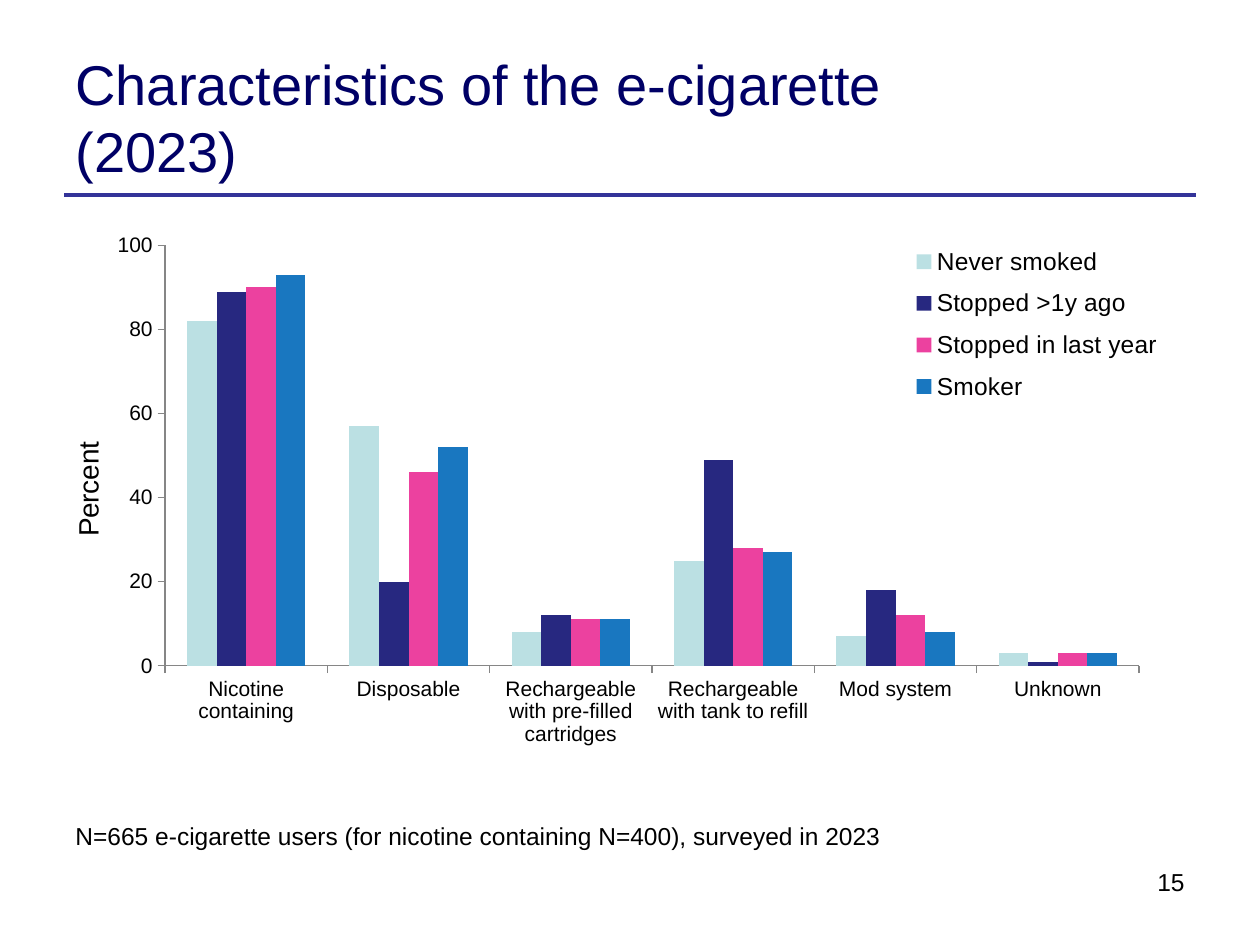
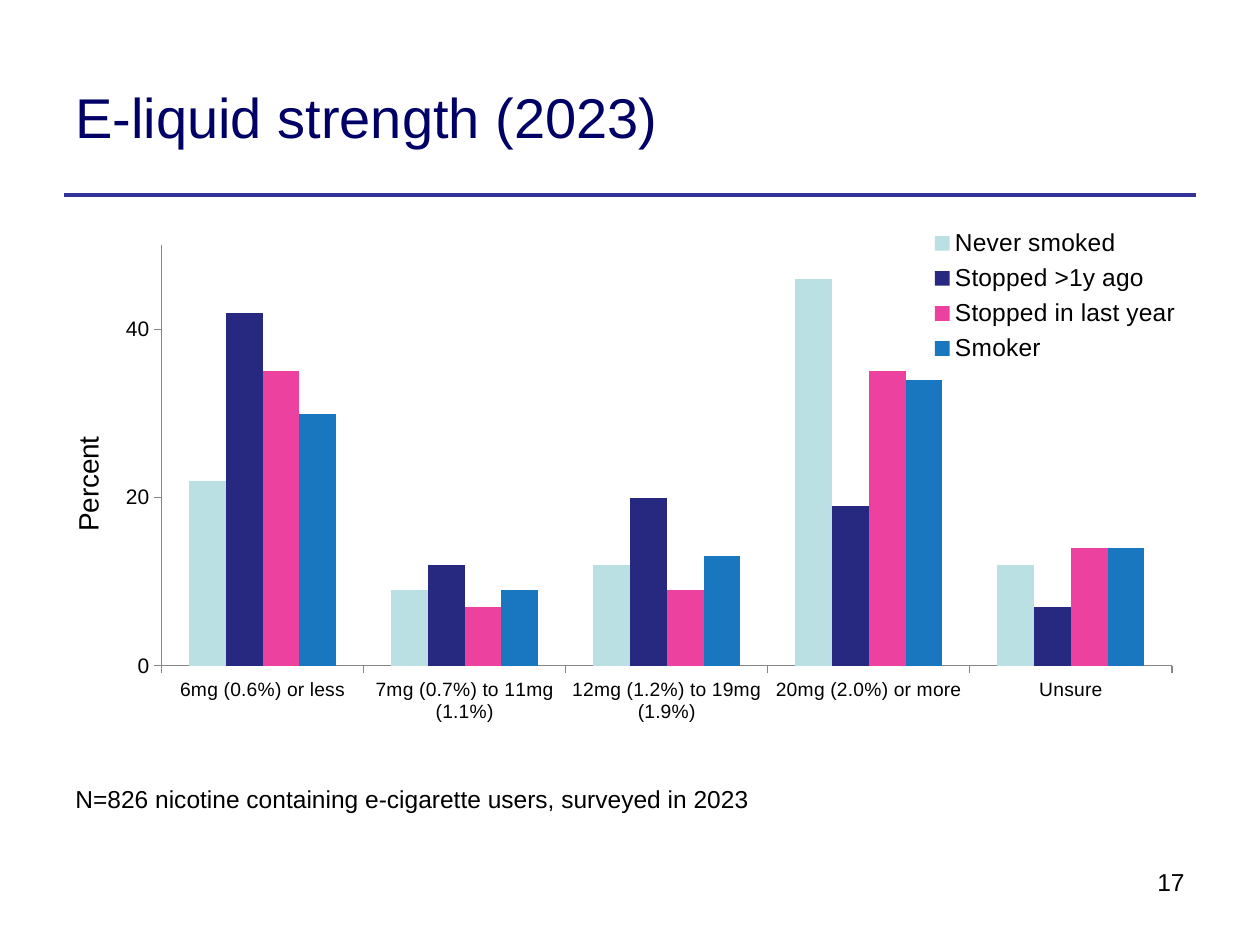
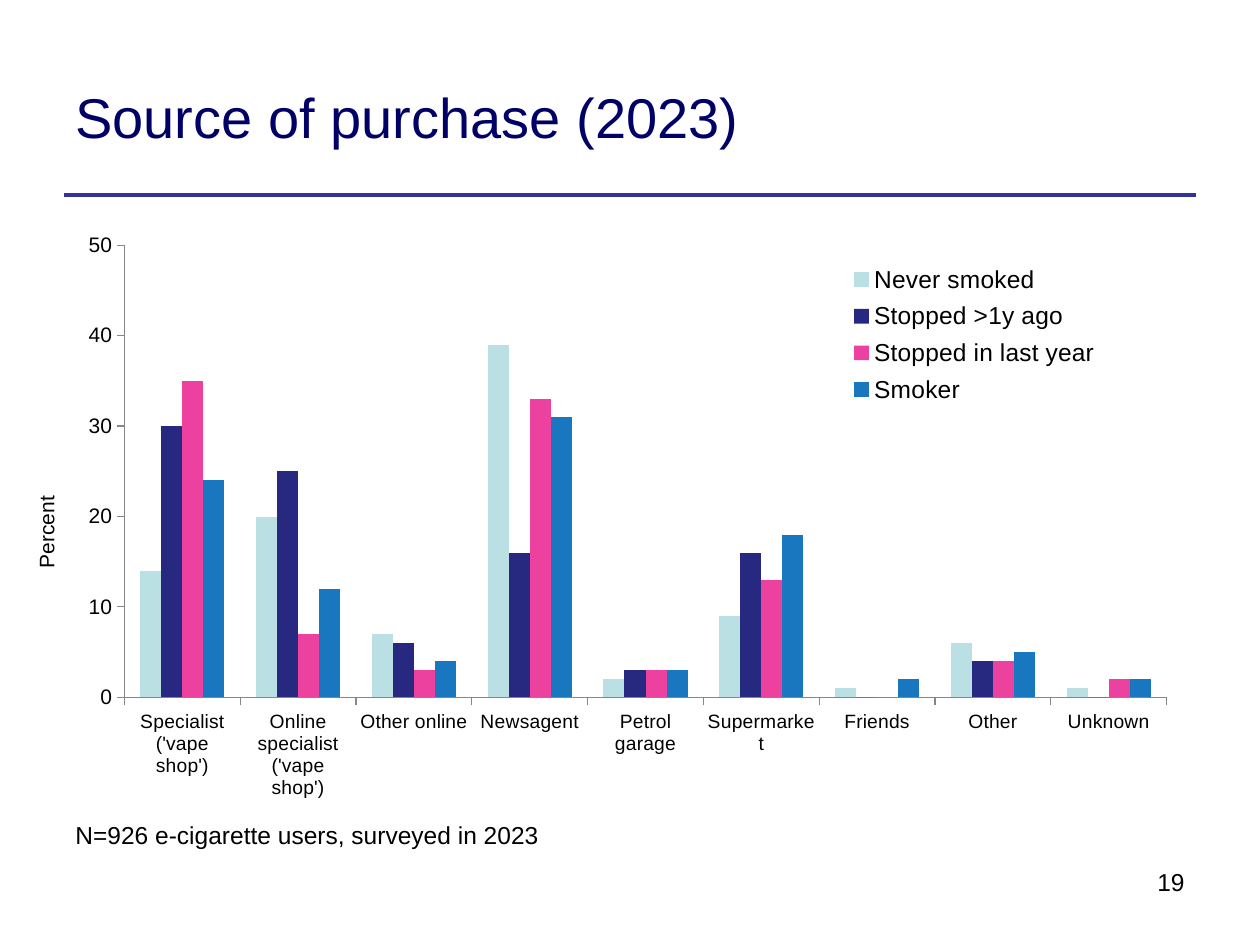
"""Build three survey slides on e-cigarette use, one clustered column chart each."""
from lxml import etree
from pptx import Presentation
from pptx import util as u
from pptx.chart import data as chart_data
from pptx.dml import color
from pptx.enum import chart as charts, shapes, text
from pptx.oxml import ns

COLOURS = {"title": "000066", "rule": "333399", "text": "000000", "axis": "868686"}
GROUPS = {
    "Never smoked": "BBE0E3",
    "Stopped >1y ago": "272880",
    "Stopped in last year": "EC419F",
    "Smoker": "1977C0",
}
FONT = "Arial"

SLIDES = [
    {
        "title": "Characteristics of the e-cigarette (2023)",
        "number": 15,
        "note": "N=665 e-cigarette users (for nicotine containing N=400), surveyed in 2023",
        "note_at": (0.5, 6.47, 7.52, 0.34),
        "chart_at": (0.5, 1.74, 9, 4.72),
        "plot": {"x": 9, "y": 4.4, "w": 85.9, "h": 70.7},
        "legend": {"x": 74.4, "y": 2.5, "w": 23, "h": 30.3},
        "axis_title": {"x": 0.2, "y": 36.6},
        "sizes": {"category": 12, "title": 16},
        "scale": {"maximum_scale": 100, "major_unit": 20},
        "rows": {
            "Nicotine containing": (82, 89, 90, 93),
            "Disposable": (57, 20, 46, 52),
            "Rechargeable with pre-filled cartridges": (8, 12, 11, 11),
            "Rechargeable with tank to refill": (25, 49, 28, 27),
            "Mod system": (7, 18, 12, 8),
            "Unknown": (3, 1, 3, 3),
        },
    },
    {
        "title": "E-liquid strength (2023)",
        "number": 17,
        "note": "N=826 nicotine containing e-cigarette users, surveyed in 2023",
        "note_at": (0.5, 6.17, 9.3, 0.34),
        "chart_at": (0.5, 1.74, 9, 4.72),
        "plot": {"x": 8.7, "y": 4.4, "w": 89.1, "h": 70.7},
        "legend": {"x": 76, "y": 0.5, "w": 23, "h": 24.8},
        "axis_title": {"x": 0.2, "y": 35.7},
        "sizes": {"category": 11, "title": 16},
        "scale": {"maximum_scale": 50, "major_unit": 20},
        "rows": {
            "6mg (0.6%) or less": (22, 42, 35, 30),
            "7mg (0.7%) to 11mg (1.1%)": (9, 12, 7, 9),
            "12mg (1.2%) to 19mg (1.9%)": (12, 20, 9, 13),
            "20mg (2.0%) or more": (46, 19, 35, 34),
            "Unsure": (12, 7, 14, 14),
        },
    },
    {
        "title": "Source of purchase (2023)",
        "number": 19,
        "note": "N=926 e-cigarette users, surveyed in 2023",
        "note_at": (0.5, 6.46, 9.44, 0.34),
        "chart_at": (0.15, 1.74, 9.63, 4.72),
        "plot": {"x": 8.7, "y": 4.4, "w": 85.9, "h": 76},
        "legend": {"x": 68, "y": 6.3, "w": 21.5, "h": 26.2},
        "axis_title": {"x": 0.9, "y": 45.9},
        "sizes": {"category": 11, "title": 12},
        "scale": {"maximum_scale": 50, "major_unit": 10},
        "rows": {
            "Specialist ('vape shop')": (14, 30, 35, 24),
            "Online specialist ('vape shop')": (20, 25, 7, 12),
            "Other online": (7, 6, 3, 4),
            "Newsagent": (39, 16, 33, 31),
            "Petrol garage": (2, 3, 3, 3),
            "Supermarket": (9, 16, 13, 18),
            "Friends": (1, 0, 0, 2),
            "Other": (6, 4, 4, 5),
            "Unknown": (1, 0, 2, 2),
        },
    },
]


def rgb(value):
    """Turn a hex string into a colour."""
    return color.RGBColor.from_string(value)


def apply(target, values):
    """Set each named attribute on the target."""
    for name, value in values.items():
        setattr(target, name, value)


def set_font(font, size, colour="text"):
    """Give a font the deck's typeface with a size and colour."""
    apply(font, {"name": FONT, "size": u.Pt(size), "bold": False})
    font.color.rgb = rgb(COLOURS[colour])


def add_text(page, at, words, size, colour="text", frame=None, align=text.PP_ALIGN.LEFT):
    """Add a wrapped one-paragraph text box."""
    box = page.shapes.add_textbox(*map(u.Inches, at))
    apply(box.text_frame, {"word_wrap": True, **(frame or {})})
    para = box.text_frame.paragraphs[0]
    para.alignment = align
    span = para.add_run()
    span.text = words
    set_font(span.font, size, colour)


def add_rule(page):
    """Draw the line under the title."""
    ends = map(u.Inches, (0.51, 1.55, 9.49, 1.55))
    rule = page.shapes.add_connector(shapes.MSO_CONNECTOR.STRAIGHT, *ends)
    rule.line.width = u.Pt(2.25)
    rule.line.color.rgb = rgb(COLOURS["rule"])
    etree.SubElement(rule._element.spPr, ns.qn("a:effectLst"))


def place(element, index, percents, target=None):
    """Fix a chart part at percentages of the chart area."""
    for old in element.findall(ns.qn("c:layout")):
        element.remove(old)
    layout = etree.Element(ns.qn("c:layout"))
    manual = etree.SubElement(layout, ns.qn("c:manualLayout"))
    settings = {"layoutTarget": target} if target else {}
    settings.update(xMode="edge", yMode="edge")
    settings.update({name: f"{value / 100:.3f}" for name, value in percents.items()})
    for name, value in settings.items():
        etree.SubElement(manual, ns.qn(f"c:{name}")).set("val", value)
    element.insert(index, layout)


def turn_text(element, angle):
    """Set the angle of a chart part's text."""
    body = next(element.iter(ns.qn("a:bodyPr")))
    body.set("rot", str(angle * 60000))
    body.set("vert", "horz")


def style_axis(axis, size):
    """Give an axis outside ticks, a thin grey line and level labels."""
    apply(axis, {
        "has_major_gridlines": False,
        "major_tick_mark": charts.XL_TICK_MARK.OUTSIDE,
        "minor_tick_mark": charts.XL_TICK_MARK.NONE,
    })
    axis.format.line.width = u.Pt(0.75)
    axis.format.line.color.rgb = rgb(COLOURS["axis"])
    set_font(axis.tick_labels.font, size)
    turn_text(axis._element.find(ns.qn("c:txPr")), 0)


def add_axis_title(axis, size, percents):
    """Add the upright Percent title beside the value axis."""
    frame = axis.axis_title.text_frame
    span = frame.paragraphs[0].add_run()
    span.text = "Percent"
    set_font(span.font, size)
    title = axis.axis_title._element
    turn_text(title, -90)
    place(title, 1, percents)


def add_column_chart(page, content):
    """Add the chart comparing the smoking groups."""
    source = chart_data.CategoryChartData()
    source.categories = list(content["rows"])
    for name, values in zip(GROUPS, zip(*content["rows"].values())):
        source.add_series(name, values)
    chart = page.shapes.add_chart(
        charts.XL_CHART_TYPE.COLUMN_CLUSTERED, *map(u.Inches, content["chart_at"]), source
    ).chart
    set_font(chart.font, 18)
    apply(chart, {"has_title": False, "has_legend": True})
    plot = chart.plots[0]
    apply(plot, {"gap_width": 150, "overlap": 0, "vary_by_categories": False})
    for series, colour in zip(plot.series, GROUPS.values()):
        series.format.fill.solid()
        series.format.fill.fore_color.rgb = rgb(colour)

    sizes = content["sizes"]
    style_axis(chart.category_axis, sizes["category"])
    style_axis(chart.value_axis, 12)
    apply(chart.value_axis, {"minimum_scale": 0, **content["scale"]})
    add_axis_title(chart.value_axis, sizes["title"], content["axis_title"])

    legend = chart.legend
    apply(legend, {"position": charts.XL_LEGEND_POSITION.RIGHT, "include_in_layout": False})
    set_font(legend.font, 14)
    place(legend._element, 1, content["legend"])
    place(chart._chartSpace.chart.plotArea, 0, content["plot"], "inner")


def add_page(deck, content):
    """Add one slide with title, rule, number, chart and note."""
    page = deck.slides.add_slide(deck.slide_layouts[6])
    add_rule(page)
    add_text(page, (0.5, 0.3, 7.89, 1.25), content["title"], 32, "title",
             {"vertical_anchor": text.MSO_ANCHOR.MIDDLE})
    add_text(page, (6.73, 6.83, 2.77, 0.52), str(content["number"]), 14,
             align=text.PP_ALIGN.RIGHT)
    add_column_chart(page, content)
    add_text(page, content["note_at"], content["note"], 14,
             frame={"auto_size": text.MSO_AUTO_SIZE.SHAPE_TO_FIT_TEXT})


def main():
    """Build and save the deck."""
    deck = Presentation()
    apply(deck, {"slide_width": u.Inches(10), "slide_height": u.Inches(7.5)})
    for content in SLIDES:
        add_page(deck, content)
    deck.save("out.pptx")


if __name__ == "__main__":
    main()
